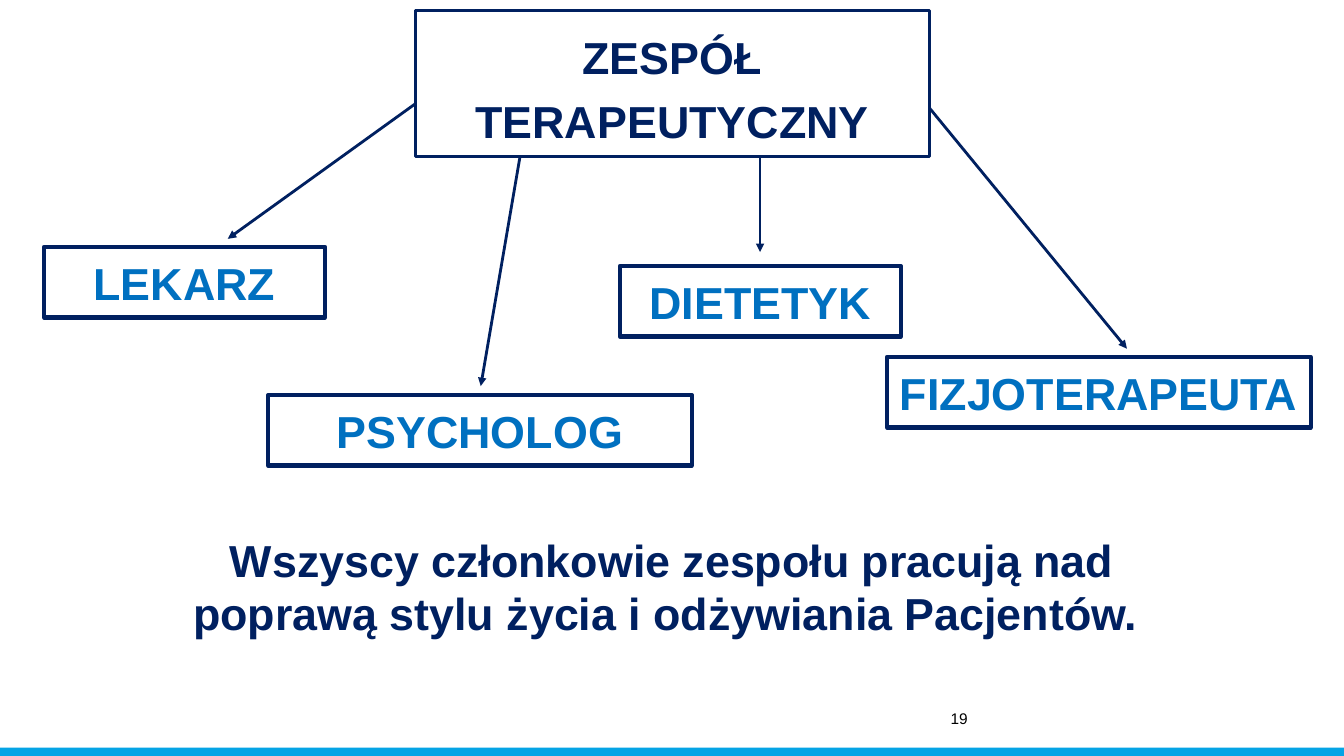
"""Build the slide that shows the members of the therapy team."""
from lxml import etree
from pptx import Presentation
from pptx.dml.color import RGBColor
from pptx.enum.shapes import MSO_CONNECTOR, MSO_SHAPE
from pptx.enum.text import MSO_ANCHOR, MSO_AUTO_SIZE, PP_ALIGN
from pptx.oxml.ns import qn
from pptx.util import Pt

RECT = MSO_SHAPE.RECTANGLE
LINE = MSO_CONNECTOR.STRAIGHT
MIDDLE, TOP = MSO_ANCHOR.MIDDLE, MSO_ANCHOR.TOP
CENTER, LEFT = PP_ALIGN.CENTER, PP_ALIGN.LEFT
FIXED = MSO_AUTO_SIZE.NONE
NAVY, BLUE, SKY, WHITE, BLACK = "002060", "0070C0", "05A4E5", "FFFFFF", "000000"


def paint(color, tone):
    if hasattr(color, "solid"):
        color.solid()
        color = color.fore_color
    color.rgb = RGBColor.from_string(tone)


def write(shape, text, tone, size=32, bold=True, align=CENTER, anchor=MIDDLE):
    frame = shape.text_frame
    frame.word_wrap = True
    frame.auto_size = FIXED
    frame.vertical_anchor = anchor
    frame.margin_left = frame.margin_right = Pt(6)
    frame.margin_top = frame.margin_bottom = Pt(6)
    frame.text = text
    par = frame.paragraphs[0]
    par.alignment = align
    par.font.name = "Arial"
    par.font.size = Pt(size)
    par.font.bold = bold
    paint(par.font.color, tone)
    return par


deck = Presentation()
deck.slide_width, deck.slide_height = Pt(960), Pt(540)
slide = deck.slides.add_slide(deck.slide_layouts[5])
shapes = slide.shapes

band = shapes.add_shape(RECT, Pt(-1), Pt(534), Pt(962), Pt(6.5))
band.shadow.inherit = False
paint(band.fill, SKY)
band.line.fill.background()

page = shapes.add_textbox(Pt(673), Pt(500.4), Pt(220), Pt(24.5))
write(page, "19", BLACK, 11, False, LEFT, TOP)

title = shapes.title
title.left, title.top, title.width, title.height = Pt(296.6), Pt(7.2), Pt(367.2), Pt(104.4)
write(title, "ZESPÓŁ TERAPEUTYCZNY", NAVY).line_spacing = 1.2
paint(title.line.fill, NAVY)
title.line.width = Pt(2.25)

roles = [
    ("LEKARZ", 31.5, 176.4, 200.7),
    ("DIETETYK", 442.8, 190, 200.7),
    ("FIZJOTERAPEUTA", 633.6, 255, 302.6),
    ("PSYCHOLOG", 191.5, 282.2, 302.6),
]
for role, left, top, width in roles:
    box = shapes.add_shape(RECT, Pt(left), Pt(top), Pt(width), Pt(50.4))
    box.shadow.inherit = False
    paint(box.fill, WHITE)
    paint(box.line.fill, NAVY)
    box.line.width = Pt(3)
    write(box, role, BLUE)

claim = shapes.add_textbox(Pt(101.5), Pt(374.4), Pt(757.4), Pt(88.6))
write(claim, "Wszyscy członkowie zespołu pracują nad poprawą stylu życia i odżywiania Pacjentów. ", NAVY)

arrows = [
    (371.5, 111.6, 343.4, 275.8),
    (296.6, 74.2, 162.7, 170.6),
    (542.9, 111.6, 542.9, 180),
    (663.8, 77, 805, 249.1),
]
for ends in arrows:
    arrow = shapes.add_connector(LINE, *map(Pt, ends))
    paint(arrow.line.fill, NAVY)
    arrow.line.width = Pt(2)
    etree.SubElement(arrow.line._get_or_add_ln(), qn("a:tailEnd"), type="triangle")
    etree.SubElement(arrow._element.spPr, qn("a:effectLst"))

deck.save("out.pptx")
